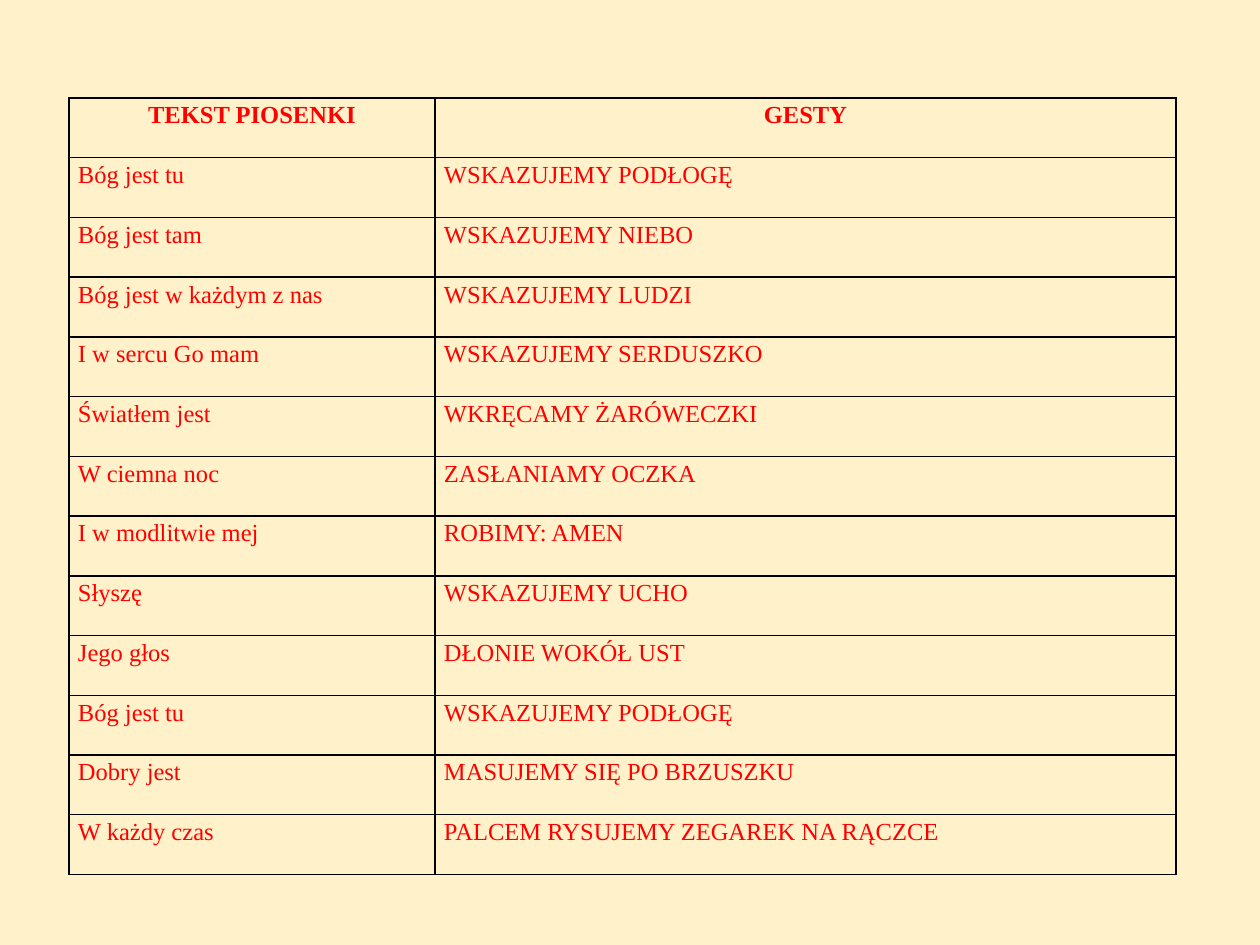
from lxml import etree
from pptx import Presentation
from pptx.dml.color import RGBColor
from pptx.enum.text import MSO_ANCHOR, PP_ALIGN
from pptx.oxml.ns import qn
from pptx.util import Emu, Pt

CENTER, LEFT = PP_ALIGN.CENTER, PP_ALIGN.LEFT
TOP = MSO_ANCHOR.TOP
CREAM = RGBColor(0xFF, 0xF2, 0xCB)
RED = RGBColor(0xFF, 0x00, 0x00)
BLACK = RGBColor(0x00, 0x00, 0x00)
PX = 914400 / 126


def px(length):
    return Emu(round(length * PX))


def add_borders(cell):
    properties = cell._tc.get_or_add_tcPr()
    for position, side in enumerate(("lnL", "lnR", "lnT", "lnB")):
        line = etree.Element(qn(f"a:{side}"), w=str(Pt(1)))
        fill = etree.SubElement(line, qn("a:solidFill"))
        etree.SubElement(fill, qn("a:srgbClr"), val=str(BLACK))
        properties.insert(position, line)


LYRICS_AND_GESTURES = [
    ("TEKST PIOSENKI", "GESTY"),
    ("Bóg jest tu", "WSKAZUJEMY PODŁOGĘ"),
    ("Bóg jest tam", "WSKAZUJEMY NIEBO"),
    ("Bóg jest w każdym z nas", "WSKAZUJEMY LUDZI"),
    ("I w sercu Go mam", "WSKAZUJEMY SERDUSZKO"),
    ("Światłem jest", "WKRĘCAMY ŻARÓWECZKI"),
    ("W ciemna noc", "ZASŁANIAMY OCZKA"),
    ("I w modlitwie mej", "ROBIMY: AMEN"),
    ("Słyszę", "WSKAZUJEMY UCHO"),
    ("Jego głos", "DŁONIE WOKÓŁ UST"),
    ("Bóg jest tu", "WSKAZUJEMY PODŁOGĘ"),
    ("Dobry jest", "MASUJEMY SIĘ PO BRZUSZKU"),
    ("W każdy czas", "PALCEM RYSUJEMY ZEGAREK NA RĄCZCE"),
]
COLUMN_WIDTHS = (366, 741)
SONG_HEIGHT = 777

# Slide and background
prs = Presentation()
prs.slide_width, prs.slide_height = px(1260), px(945)
slide = prs.slides.add_slide(prs.slide_layouts[6])
slide.background.fill.solid()
slide.background.fill.fore_color.rgb = CREAM

# Song table: equal rows, lyrics beside gestures
song = slide.shapes.add_table(
    len(LYRICS_AND_GESTURES), len(COLUMN_WIDTHS),
    px(69), px(98), px(sum(COLUMN_WIDTHS)), px(SONG_HEIGHT),
).table
song.horz_banding = False
for column, width in zip(song.columns, COLUMN_WIDTHS):
    column.width = px(width)

# Lines of the song
for row, line_texts in enumerate(LYRICS_AND_GESTURES):
    is_header = row == 0
    for col, text in enumerate(line_texts):
        cell = song.cell(row, col)
        cell.fill.background()
        cell.margin_left = cell.margin_right = px(9)
        cell.margin_top = cell.margin_bottom = 0
        cell.vertical_anchor = TOP
        add_borders(cell)
        paragraph = cell.text_frame.paragraphs[0]
        paragraph.text = text
        paragraph.alignment = CENTER if is_header else LEFT
        paragraph.line_spacing = 1.15
        font = paragraph.runs[0].font
        font.name = "Times New Roman"
        font.size = Pt(14)
        font.bold = is_header
        font.color.rgb = RED

prs.save("out.pptx")
